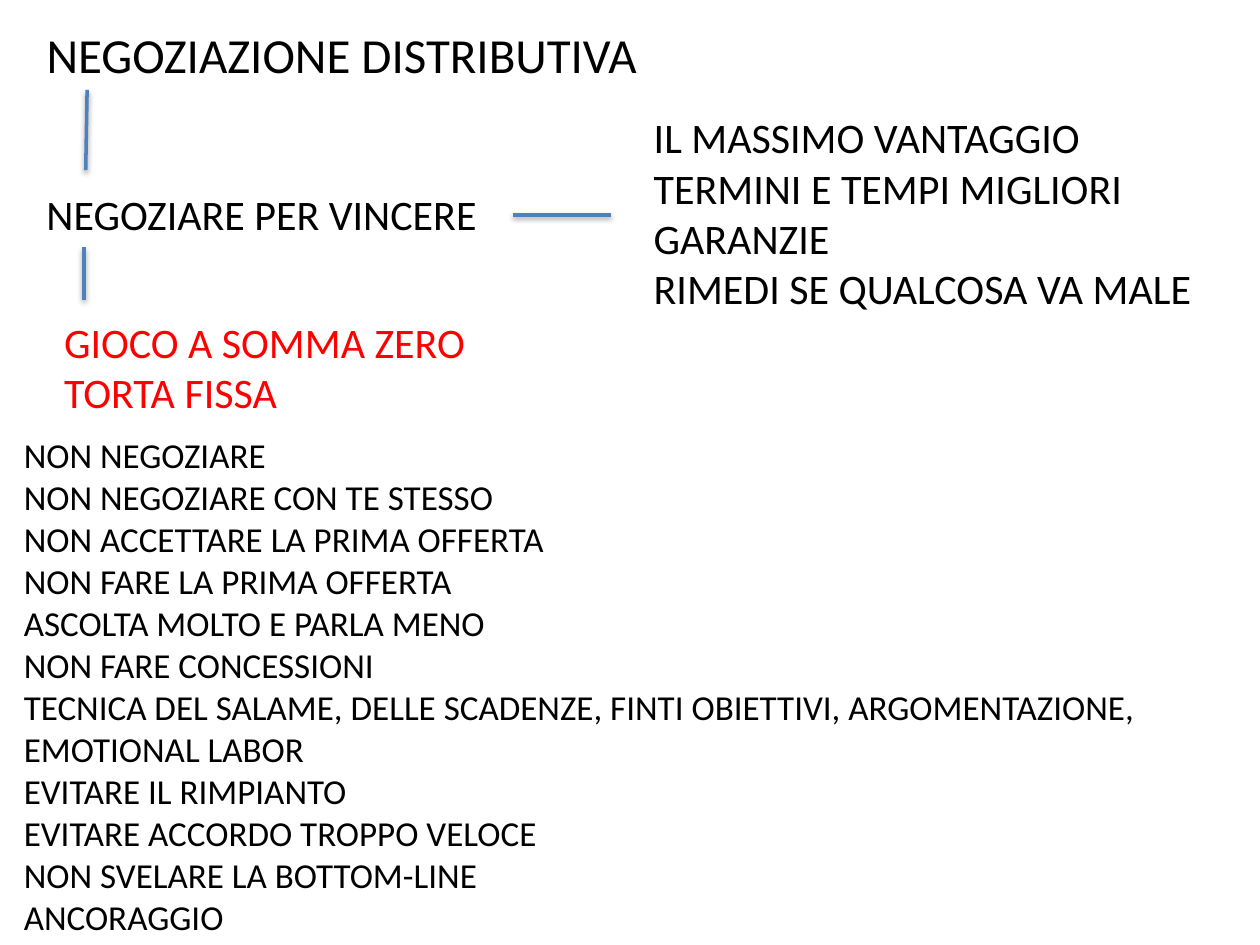
from dataclasses import dataclass

from lxml import etree
from pptx import Presentation
from pptx import util as u
from pptx.dml.color import RGBColor
from pptx.enum import shapes, text
from pptx.oxml import parse_xml

HUES = {"ink": "000000", "alert": "FF0000", "rule": "4F81BD", "shade": "000000"}
FONT = "Calibri"
NS = "http://schemas.openxmlformats.org/drawingml/2006/main"
SHADE = f"""<a:effectLst xmlns:a="{NS}">
  <a:outerShdw blurRad="{u.Pt(3.15)}" dist="{u.Pt(1.57)}" dir="5400000" rotWithShape="0">
    <a:srgbClr val="{HUES['shade']}"><a:alpha val="38000"/></a:srgbClr>
  </a:outerShdw>
</a:effectLst>"""


@dataclass
class Note:
    left: float
    top: float
    width: float
    height: float
    size: int
    lines: list[str]
    hue: str = "ink"
    wrap: bool = False


@dataclass
class Link:
    x1: float
    y1: float
    x2: float
    y2: float


NOTES = [
    # Title and main idea
    Note(19.5, 10.2, 358, 41.2, 28, ["NEGOZIAZIONE DISTRIBUTIVA"]),
    Note(19.5, 104.4, 263.5, 36.3, 24, ["NEGOZIARE PER VINCERE"]),
    # Goals
    Note(366.5, 60.3, 327, 123.6, 24, [
        "IL MASSIMO VANTAGGIO",
        "TERMINI E TEMPI MIGLIORI",
        "GARANZIE",
        "RIMEDI SE QUALCOSA VA MALE",
    ]),
    # Tactics
    Note(6.5, 244.2, 706.3, 298, 20, [
        "NON NEGOZIARE",
        "NON NEGOZIARE CON TE STESSO",
        "NON ACCETTARE LA PRIMA OFFERTA",
        "NON FARE LA PRIMA OFFERTA",
        "ASCOLTA MOLTO E PARLA MENO",
        "NON FARE CONCESSIONI",
        "TECNICA DEL SALAME, DELLE SCADENZE, FINTI OBIETTIVI, ARGOMENTAZIONE,",
        "EMOTIONAL LABOR",
        "EVITARE IL RIMPIANTO",
        "EVITARE ACCORDO TROPPO VELOCE",
        "NON SVELARE LA BOTTOM-LINE",
        "ANCORAGGIO",
    ], wrap=True),
    # Zero-sum view
    Note(29.5, 177.1, 246.2, 65.4, 24, ["GIOCO A SOMMA ZERO", "TORTA FISSA"], hue="alert"),
]

LINKS = [
    Link(49.8, 51.4, 49, 97.2),
    Link(293.2, 122.8, 349.2, 122.8),
    Link(48, 141, 48, 171.4),
]


def put_note(slide, note: Note) -> None:
    box = slide.shapes.add_textbox(
        *map(u.Pt, (note.left, note.top, note.width, note.height)))
    frame = box.text_frame
    frame.text = "\n".join(note.lines)
    frame.word_wrap = note.wrap
    frame.auto_size = text.MSO_AUTO_SIZE.SHAPE_TO_FIT_TEXT
    style = {"name": FONT, "size": u.Pt(note.size)}
    for para in frame.paragraphs:
        font = para.runs[0].font
        for key, val in style.items():
            setattr(font, key, val)
        font.color.rgb = RGBColor.from_string(HUES[note.hue])


def put_link(slide, link: Link) -> None:
    line = slide.shapes.add_connector(
        shapes.MSO_CONNECTOR.STRAIGHT,
        *map(u.Pt, (link.x1, link.y1, link.x2, link.y2)))
    line.line.width = u.Pt(2)
    line.line.color.rgb = RGBColor.from_string(HUES["rule"])
    # Soft shadow below the line
    line._element.spPr.append(parse_xml(SHADE))


def main() -> None:
    deck = Presentation()
    deck.slide_width, deck.slide_height = u.Pt(720), u.Pt(540)
    slide = deck.slides.add_slide(deck.slide_layouts[6])
    for note in NOTES:
        put_note(slide, note)
    for link in LINKS:
        put_link(slide, link)
    deck.save("out.pptx")


if __name__ == "__main__":
    main()
